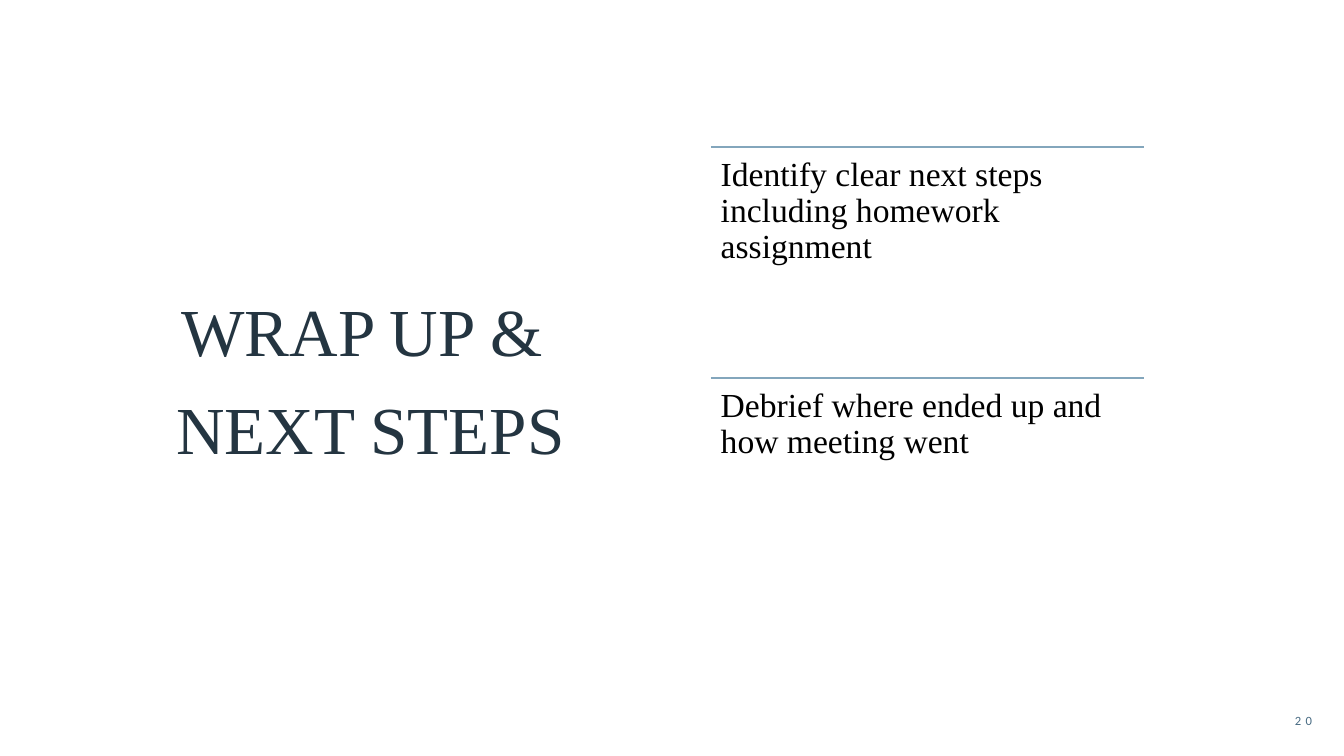
from dataclasses import dataclass

from lxml.etree import SubElement
from pptx import Presentation
from pptx.dml.color import RGBColor
from pptx.enum.shapes import MSO_CONNECTOR as Connector
from pptx.enum.text import MSO_ANCHOR as Anchor, MSO_AUTO_SIZE as AutoSize, PP_ALIGN as Align
from pptx.oxml.ns import qn
from pptx.util import Emu, Pt

PX = 9144  # 100 px to the inch


@dataclass(frozen=True)
class Theme:
    serif: str = "Times New Roman"
    sans: str = "Calibri"
    heading: str = "243541"
    body: str = "000000"
    rule: str = "83A6BC"
    number: str = "486B83"
    heading_size: int = 48
    body_size: int = 24
    number_size: int = 9


THEME = Theme()
HEADING = ["WRAP UP & ", "NEXT STEPS"]
STEPS = [
    "Identify clear next steps including homework assignment",
    "Debrief where ended up and how meeting went",
]
STEP_LEFT, STEP_TOP, STEP_WIDTH, STEP_HEIGHT = 705, 146, 430, 229


def px(length):
    return Emu(length * PX)


def style(para, face, size, color, align):
    para.alignment = align
    para.font.name = face
    para.font.size = Pt(size)
    para.font.color.rgb = RGBColor.from_string(color)


def add_heading(slide, lines, left, top, width, height):
    title = slide.shapes.title
    title.left, title.top, title.width, title.height = map(px, (left, top, width, height))
    frame = title.text_frame
    frame.text = "\n".join(lines)
    frame.word_wrap = True
    frame.auto_size = AutoSize.NONE
    frame.vertical_anchor = Anchor.MIDDLE
    for para in frame.paragraphs:
        style(para, THEME.serif, THEME.heading_size, THEME.heading, Align.CENTER)
        para.space_before, para.space_after = Pt(10), Pt(2)


def add_text(slide, text, left, top, width, height, anchor):
    box = slide.shapes.add_textbox(*map(px, (left, top, width, height)))
    frame = box.text_frame
    frame.text = text
    frame.word_wrap = True
    frame.vertical_anchor = anchor
    return frame


def add_rule(slide, left, top, width):
    line = slide.shapes.add_connector(
        Connector.STRAIGHT, px(left), px(top), px(left + width), px(top))
    line.line.color.rgb = RGBColor.from_string(THEME.rule)
    line.line.width = Pt(1)
    SubElement(line._element.spPr, qn("a:effectLst"))


def add_step(slide, text, top):
    add_rule(slide, STEP_LEFT, top, STEP_WIDTH)
    frame = add_text(slide, text, STEP_LEFT, top, STEP_WIDTH, STEP_HEIGHT, Anchor.TOP)
    frame.margin_left = frame.margin_right = px(10)
    frame.margin_top = frame.margin_bottom = px(10)
    para = frame.paragraphs[0]
    style(para, THEME.serif, THEME.body_size, THEME.body, Align.LEFT)
    para.line_spacing = 0.9


def add_page_number(slide, number):
    frame = add_text(slide, number, 1216, 695, 95, 40, Anchor.MIDDLE)
    para = frame.paragraphs[0]
    style(para, THEME.sans, THEME.number_size, THEME.number, Align.RIGHT)
    # Letter spacing of 3 pt
    para.runs[0].font._element.set("spc", "300")


def main():
    deck = Presentation()
    deck.slide_width, deck.slide_height = px(1333), px(750)
    slide = deck.slides.add_slide(deck.slide_layouts.get_by_name("Title Only"))

    # Heading on the left
    add_heading(slide, HEADING, 30, 109, 675, 533)

    # Ruled steps on the right
    for row, text in enumerate(STEPS):
        add_step(slide, text, STEP_TOP + row * STEP_HEIGHT)

    # Page number
    add_page_number(slide, "20")
    deck.save("out.pptx")


if __name__ == "__main__":
    main()
